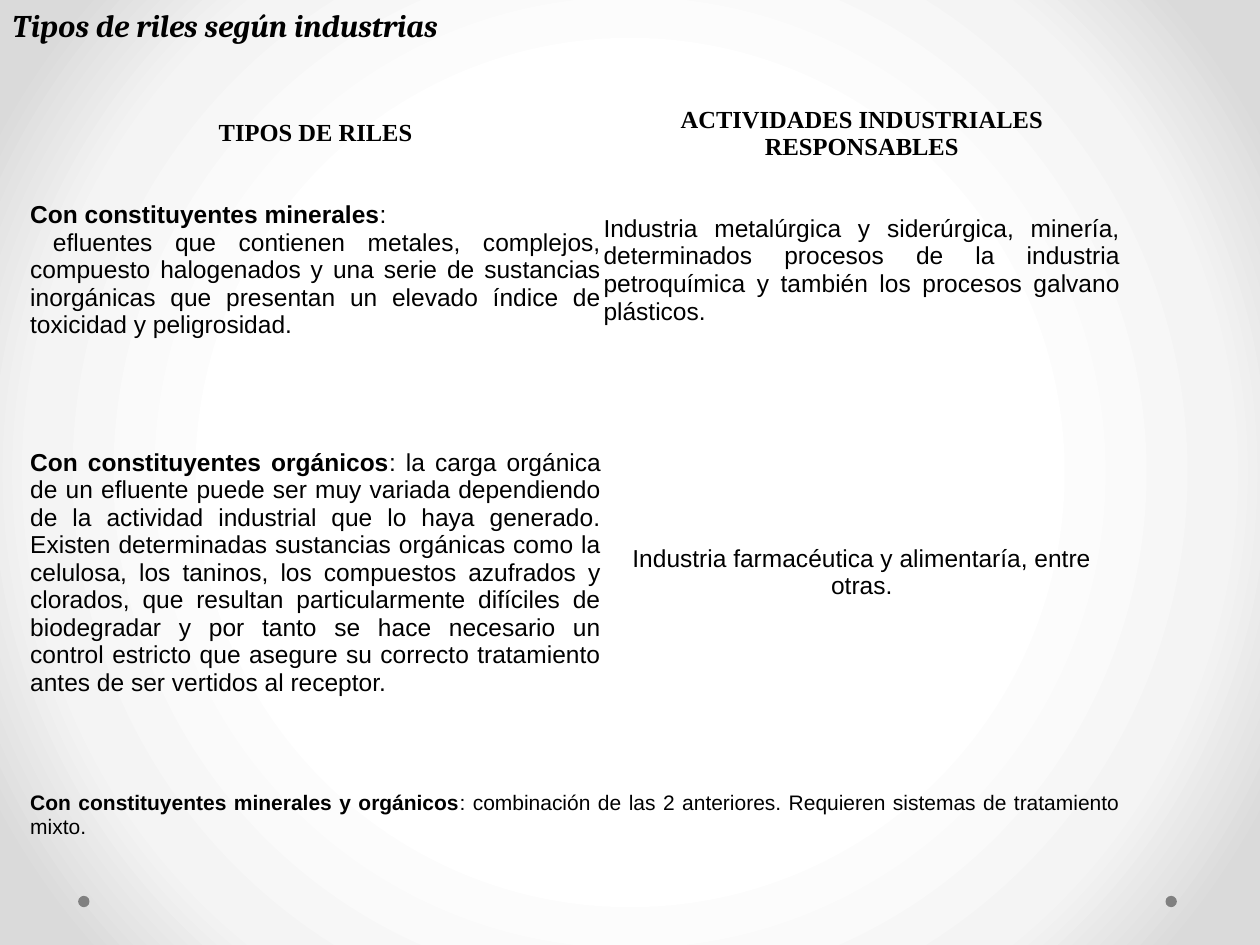
from pptx import Presentation
from pptx.dml.color import RGBColor
from pptx.enum.shapes import MSO_SHAPE
from pptx.enum.text import MSO_ANCHOR, PP_ALIGN
from pptx.oxml import parse_xml
from pptx.util import Inches, Pt

OVAL = MSO_SHAPE.OVAL
MIDDLE = MSO_ANCHOR.MIDDLE
MID, JUST = PP_ALIGN.CENTER, PP_ALIGN.JUSTIFY
HUES = {"ink": "000000", "dot": "808080", "core": "FFFFFF", "ring": "F4F4F4", "edge": "DADADA"}
SPACE = "http://schemas.openxmlformats.org/drawingml/2006/main"
PLAIN = "{2D5ABB26-0587-4C30-8999-92F81FD0307C}"

deck = Presentation()
deck.slide_width, deck.slide_height = Inches(10), Inches(7.5)
slide = deck.slides.add_slide(deck.slide_layouts[6])
shapes = slide.shapes

slide.background.fill.solid()
back = slide.background._cSld.bg.bgPr
stops = "".join(
    f'<a:gs pos="{pos * 1000}"><a:srgbClr val="{HUES[hue]}"/></a:gs>'
    for pos, hue in ((50, "core"), (76, "ring"), (92, "edge"))
)
back.replace(back[0], parse_xml(
    f'<a:gradFill xmlns:a="{SPACE}" rotWithShape="1"><a:gsLst>{stops}</a:gsLst>'
    '<a:path path="circle"><a:fillToRect l="50000" t="50000" r="50000" b="50000"/></a:path>'
    '</a:gradFill>'
))

for left in (9.25, 0.62):
    dot = shapes.add_shape(OVAL, Inches(left), Inches(7.11), Inches(0.09), Inches(0.09))
    dot.shadow.inherit = False
    dot.fill.solid()
    dot.fill.fore_color.rgb = RGBColor.from_string(HUES["dot"])
    dot.line.fill.background()


def write(par, runs, face, size, align=None):
    par.alignment = align
    par.font.name, par.font.size = face, Pt(size)
    par.font.color.rgb = RGBColor.from_string(HUES["ink"])
    for text, bold in runs:
        run = par.add_run()
        run.text, run.font.bold = text, bold


cols, rows = (4.55, 4.12), (0.56, 1.61, 3.19, 0.66)
frame = shapes.add_table(
    len(rows), len(cols), Inches(0.23), Inches(0.78), Inches(sum(cols)), Inches(sum(rows))
)
grid = frame.table
grid.first_row = grid.horz_banding = False
grid._tbl.tblPr.find(f"{{{SPACE}}}tableStyleId").text = PLAIN
for col, width in zip(grid.columns, cols):
    col.width = Inches(width)
for row, height in zip(grid.rows, rows):
    row.height = Inches(height)
grid.cell(3, 0).merge(grid.cell(3, 1))

HEAD, BODY = "Times New Roman", "Arial"
cells = (
    (0, 0, HEAD, 14, MID, [[("TIPOS DE RILES", True)]]),
    (0, 1, HEAD, 14, MID, [[("ACTIVIDADES INDUSTRIALES RESPONSABLES", True)]]),
    (1, 0, BODY, 14, JUST, [
        [("Con constituyentes minerales", True), (":", False)],
        [(" efluentes que contienen metales, complejos, compuesto halogenados y una serie de "
          "sustancias inorgánicas que presentan un elevado índice de toxicidad y peligrosidad.", False)],
    ]),
    (1, 1, BODY, 14, JUST, [[
        ("Industria metalúrgica y siderúrgica, minería, determinados procesos de la industria "
         "petroquímica y también los procesos galvano plásticos. ", False),
    ]]),
    (2, 0, BODY, 14, JUST, [[
        ("Con constituyentes orgánicos", True),
        (": la carga orgánica de un efluente puede ser muy variada dependiendo de la actividad "
         "industrial que lo haya generado. Existen determinadas sustancias orgánicas como la "
         "celulosa, los taninos, los compuestos azufrados y clorados, que resultan particularmente "
         "difíciles de biodegradar y por tanto se hace necesario un control estricto que asegure "
         "su correcto tratamiento antes de ser vertidos al receptor.", False),
    ]]),
    (2, 1, BODY, 14, MID, [[("Industria farmacéutica y alimentaría, entre otras.", False)]]),
    (3, 0, BODY, 12, JUST, [[
        ("Con constituyentes minerales y orgánicos", True),
        (": combinación de las 2 anteriores. Requieren sistemas de tratamiento mixto.", False),
    ]]),
)
for row, col, face, size, align, pars in cells:
    cell = grid.cell(row, col)
    cell.fill.background()
    cell.vertical_anchor = MIDDLE
    cell.margin_left = cell.margin_right = cell.margin_top = cell.margin_bottom = Inches(0.01)
    body = cell.text_frame
    for at, runs in enumerate(pars):
        par = body.add_paragraph() if at else body.paragraphs[0]
        write(par, runs, face, size, align)

title = shapes.add_textbox(0, 0, Inches(4.24), Inches(0.4)).text_frame
title.word_wrap = False
title.vertical_anchor = MIDDLE
write(title.paragraphs[0], [("Tipos de riles según industrias", True)], "Cambria", 18)
title.paragraphs[0].font.italic = True

deck.save("out.pptx")
